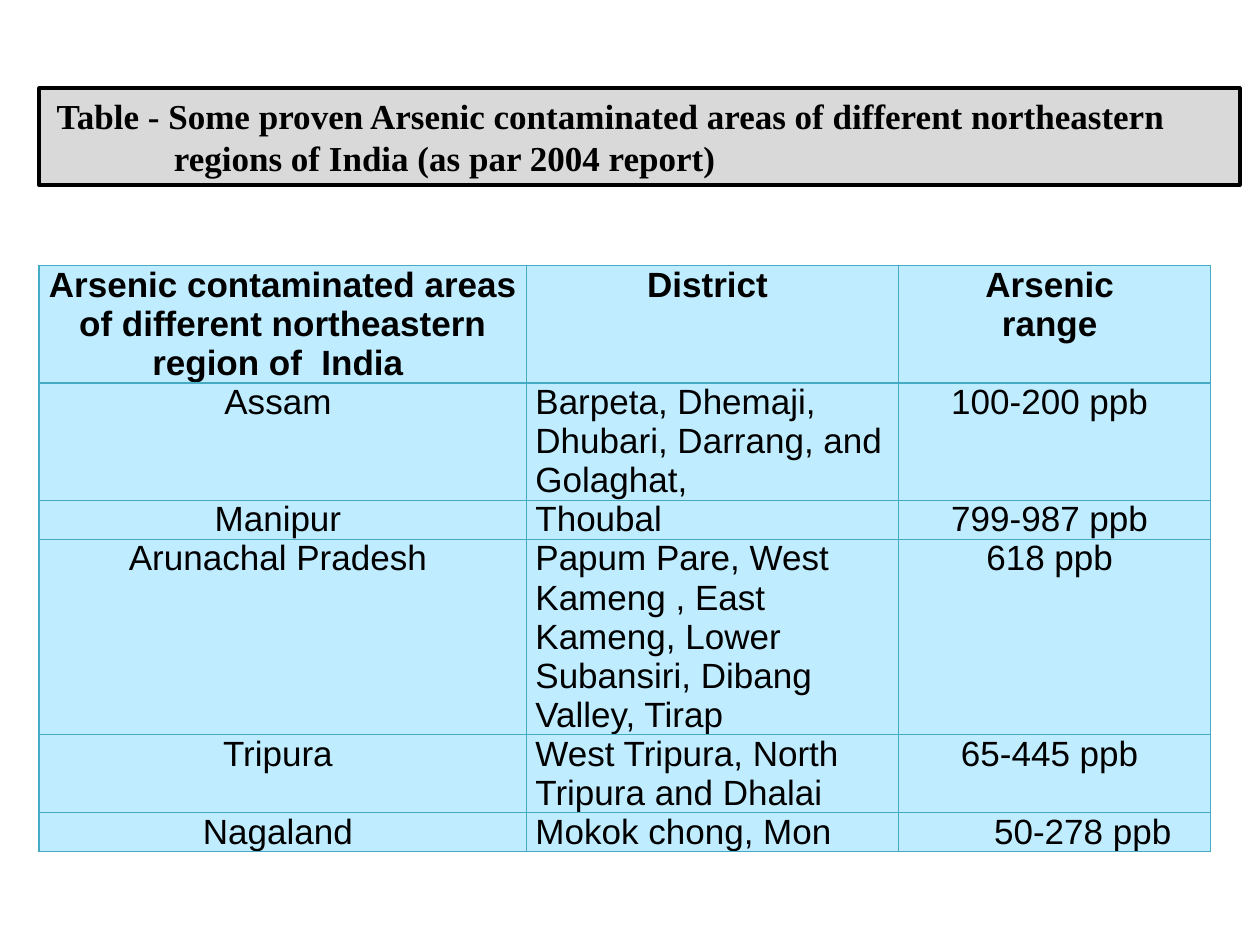
from pptx import Presentation
from pptx.dml.color import RGBColor
from pptx.enum import text as t
from pptx.oxml import parse_xml
from pptx.oxml.ns import nsdecls
from pptx.util import Inches, Pt

INK = {"text": "000000", "band": "D9D9D9", "cell": "BFECFF", "rule": "46AAC5"}
LINE = 0.31
COLS = [3.87, 2.95, 2.48]
ROWS = [
    (3, "Arsenic contaminated areas of different northeastern region of  India ",
     "District ", "Arsenic \nrange "),
    (3, "Assam ", "Barpeta, Dhemaji, Dhubari, Darrang, and Golaghat,", "100-200 ppb "),
    (1, "Manipur ", "Thoubal", "799-987 ppb "),
    (5, "Arunachal Pradesh ", "Papum Pare, West Kameng , East Kameng, Lower "
     "Subansiri, Dibang Valley, Tirap", "618 ppb "),
    (2, "Tripura ", "West Tripura, North Tripura and Dhalai", "65-445 ppb "),
    (1, "Nagaland ", "Mokok chong, Mon", "50-278 ppb"),
]


def tint(name):
    """Return a named colour."""
    return RGBColor.from_string(INK[name])


def style(para, face, bold, align):
    """Set the font and alignment of a paragraph."""
    para.alignment = align
    font = para.font
    font.name, font.size, font.bold = face, Pt(20), bold
    font.color.rgb = tint("text")


def indent(para, left, first=0):
    """Set the left margin and first-line indent of a paragraph."""
    props = para._p.get_or_add_pPr()
    props.set("marL", str(Inches(left)))
    props.set("indent", str(Inches(first)))


def add_title(slide):
    """Turn the title placeholder into the framed caption."""
    box = slide.shapes.title
    box.left, box.top = Inches(0.31), Inches(0.7)
    box.width, box.height = Inches(9.53), Inches(0.77)
    box.fill.solid()
    box.fill.fore_color.rgb = tint("band")
    box.line.color.rgb = tint("text")
    box.line.width = Pt(2)
    frame = box.text_frame
    frame.word_wrap = True
    frame.auto_size = t.MSO_AUTO_SIZE.NONE
    frame.vertical_anchor = t.MSO_ANCHOR.MIDDLE
    frame.text = ("Table - Some proven Arsenic contaminated areas of different "
                  "northeastern\vregions of India (as par 2004 report)")
    para = frame.paragraphs[0]
    indent(para, 0.97, -0.93)
    style(para, "Times New Roman", True, t.PP_ALIGN.LEFT)


def add_rules(cell):
    """Draw thin lines on all four sides of a cell."""
    props = cell._tc.get_or_add_tcPr()
    for spot, side in enumerate(("lnL", "lnR", "lnT", "lnB")):
        props.insert(spot, parse_xml(
            f'<a:{side} {nsdecls("a")} w="{Pt(0.75)}"><a:solidFill>'
            f'<a:srgbClr val="{INK["rule"]}"/></a:solidFill></a:{side}>'))


def fill_cell(cell, words, bold, align):
    """Write and format one table cell."""
    cell.margin_left = cell.margin_right = Inches(0.07)
    cell.margin_top = cell.margin_bottom = 0
    cell.fill.solid()
    cell.fill.fore_color.rgb = tint("cell")
    add_rules(cell)
    cell.text = words
    for para in cell.text_frame.paragraphs:
        style(para, "Arial", bold, align)


def add_grid(slide):
    """Add the table of areas, districts and arsenic ranges."""
    high = LINE * sum(row[0] for row in ROWS)
    grid = slide.shapes.add_table(
        len(ROWS), len(COLS), Inches(0.31), Inches(2.11),
        Inches(sum(COLS)), Inches(high)).table
    for col, width in zip(grid.columns, COLS):
        col.width = Inches(width)
    for r, (lines, *words) in enumerate(ROWS):
        grid.rows[r].height = Inches(LINE * lines)
        for c, word in enumerate(words):
            left = r > 0 and c == 1
            align = t.PP_ALIGN.LEFT if left else t.PP_ALIGN.CENTER
            fill_cell(grid.cell(r, c), word, r == 0, align)
    last = grid.cell(len(ROWS) - 1, 2).text_frame.paragraphs[0]
    last.alignment = t.PP_ALIGN.LEFT
    indent(last, 0.69)


def main():
    """Build and save the slide."""
    deck = Presentation()
    deck.slide_width, deck.slide_height = Inches(10), Inches(7.5)
    slide = deck.slides.add_slide(deck.slide_layouts[5])
    add_grid(slide)
    add_title(slide)
    deck.save("out.pptx")


if __name__ == "__main__":
    main()
